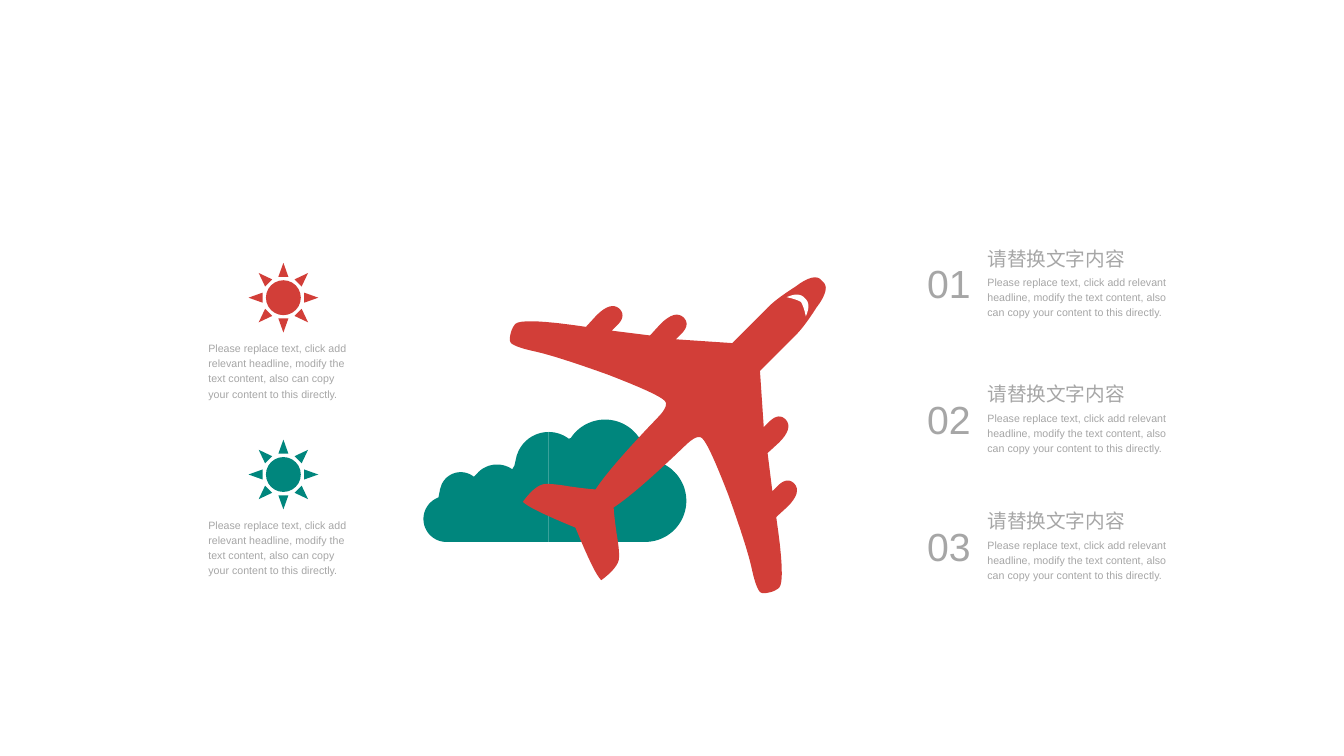
from math import cos, pi, sqrt

from pptx import Presentation
from pptx import util as u
from pptx.dml.color import RGBColor
from pptx.enum import shapes, text

RED, TEAL, GREY, WHITE = "D23E38", "00867D", "A6A6A6", "FFFFFF"
BODY = ("Please replace text, click add relevant headline, modify the text content, "
        "also can copy your content to this directly.")
HEADING = "请替换文字内容"
ITEMS = [("01", 2.53), ("02", 3.95), ("03", 5.28)]
SUNS = [(RED, 2.75), (TEAL, 4.6)]

PUFFS = [(4.67, 5.43, 0.24), (4.82, 5.16, 0.22), (5.2, 5.14, 0.28),
         (5.74, 4.87, 0.35), (6.33, 4.82, 0.43), (6.75, 5.24, 0.43)]
CLOUD_EDGES = [4.43, 5.74, 7.18]
ENGINE = [(0, 0), (0.07, -0.07), (0.15, -0.16, 0.08, -0.23),
          (-0.01, -0.31, -0.16, -0.16), (-0.27, -0.04)]
ENGINE_SPOTS = [(7.07, 3.55), (6.4, 3.46)]
NOSE = [(8.6, 2.94), (8.53, 2.84, 8.32, 3), (8.1, 3.14, 8.01, 3.24), (7.66, 3.59)]
WING_AND_TAIL = [
    (5.46, 3.32, 5.39, 3.39), (5.35, 3.44, 5.34, 3.5), (5.32, 3.58, 5.36, 3.6),
    (5.42, 3.64, 5.61, 3.68), (5.83, 3.73, 6.36, 3.92), (6.88, 4.12, 6.95, 4.19),
    (7.01, 4.24, 6.87, 4.38), (6.39, 4.88, 6.23, 5.12), (6.18, 5.12, 5.96, 5.09),
    (5.73, 5.05, 5.67, 5.07), (5.58, 5.1, 5.47, 5.25), (5.53, 5.32, 6.02, 5.52)]
WINDOW = [(8.38, 3.16), (8.33, 3.13, 8.23, 3.11), (8.36, 3.05, 8.42, 3.12)]
AXIS_SUM = 11.54
STEPS = 8


def paint(sp, color):
    sp.shadow.inherit = False
    sp.fill.solid()
    sp.fill.fore_color.rgb = RGBColor.from_string(color)
    sp.line.fill.background()


def mirrored(half):
    pts = []
    for *control, x, y in half:
        if control:
            (x0, y0), (cx, cy) = pts[-1], control
            for i in range(1, STEPS):
                t = i / STEPS
                a, b, c = (1 - t) ** 2, 2 * t * (1 - t), t * t
                pts.append((a * x0 + b * cx + c * x, a * y0 + b * cy + c * y))
        pts.append((x, y))
    return pts + [(AXIS_SUM - y, AXIS_SUM - x) for x, y in reversed(pts)]


def plane_half():
    engines = [tuple(v + spot[i % 2] for i, v in enumerate(seg))
               for spot in ENGINE_SPOTS for seg in ENGINE]
    return NOSE + engines + WING_AND_TAIL


def cloud_part(left, right):
    count = STEPS * 10
    xs = [left + (right - left) * (1 - cos(pi * i / count)) / 2 for i in range(count + 1)]

    def rise(x, puff):
        return sqrt(max(puff[2] ** 2 - (x - puff[0]) ** 2, 0))

    top = [(x, min(p[1] - rise(x, p) for p in PUFFS if abs(x - p[0]) <= p[2] + 0.01))
           for x in xs]
    first, last = PUFFS[0], PUFFS[-1]
    bottom = []
    for x in reversed(xs):
        end = first if x < first[0] else last
        near = min(max(x, first[0]), last[0]) != x
        bottom.append((x, end[1] + (rise(x, end) if near else last[2])))
    return top + bottom


def add_outline(parent, pts, color):
    start, *rest = [(u.Inches(x), u.Inches(y)) for x, y in pts]
    fb = parent.build_freeform(*start)
    fb.add_line_segments(rest, close=True)
    paint(fb.convert_to_shape(), color)


def add_text(s, words, size, box, wrap=False):
    tf = s.shapes.add_textbox(*map(u.Inches, box)).text_frame
    frame = dict(margin_left=0, margin_top=0, margin_right=0, margin_bottom=0,
                 word_wrap=wrap, auto_size=text.MSO_AUTO_SIZE.SHAPE_TO_FIT_TEXT)
    for name, value in frame.items():
        setattr(tf, name, value)
    p = tf.paragraphs[0]
    p.line_spacing = 1.2
    r = p.add_run()
    r.text = words
    for name, value in dict(size=u.Pt(size), name="Arial").items():
        setattr(r.font, name, value)
    r.font.color.rgb = RGBColor.from_string(GREY)


def main():
    """Build the plane slide with two sun notes and three numbered items."""
    prs = Presentation()
    prs.slide_width, prs.slide_height = u.Inches(14.06), u.Inches(7.91)
    s = prs.slides.add_slide(prs.slide_layouts[6])
    cloud = [(cloud_part(*ends), TEAL) for ends in zip(CLOUD_EDGES, CLOUD_EDGES[1:])]
    plane = [(mirrored(plane_half()), RED), (mirrored(WINDOW), WHITE)]
    for parts in (cloud, plane):
        group = s.shapes.add_group_shape()
        for pts, color in parts:
            add_outline(group.shapes, pts, color)
    for number, top in ITEMS:
        add_text(s, number, 29.5, (9.7, top + 0.09, 0.46, 0.54))
        add_text(s, BODY, 8, (10.33, top + 0.33, 2.04, 0.47), wrap=True)
        add_text(s, HEADING, 14.8, (10.33, top, 1.45, 0.27))
    for color, top in SUNS:
        add_text(s, BODY, 8, (2.18, top + 0.8, 1.56, 0.63), wrap=True)
        sun = s.shapes.add_shape(shapes.MSO_SHAPE.SUN, *map(u.Inches, (2.6, top, 0.73, 0.73)))
        paint(sun, color)
    prs.save("out.pptx")


if __name__ == "__main__":
    main()
